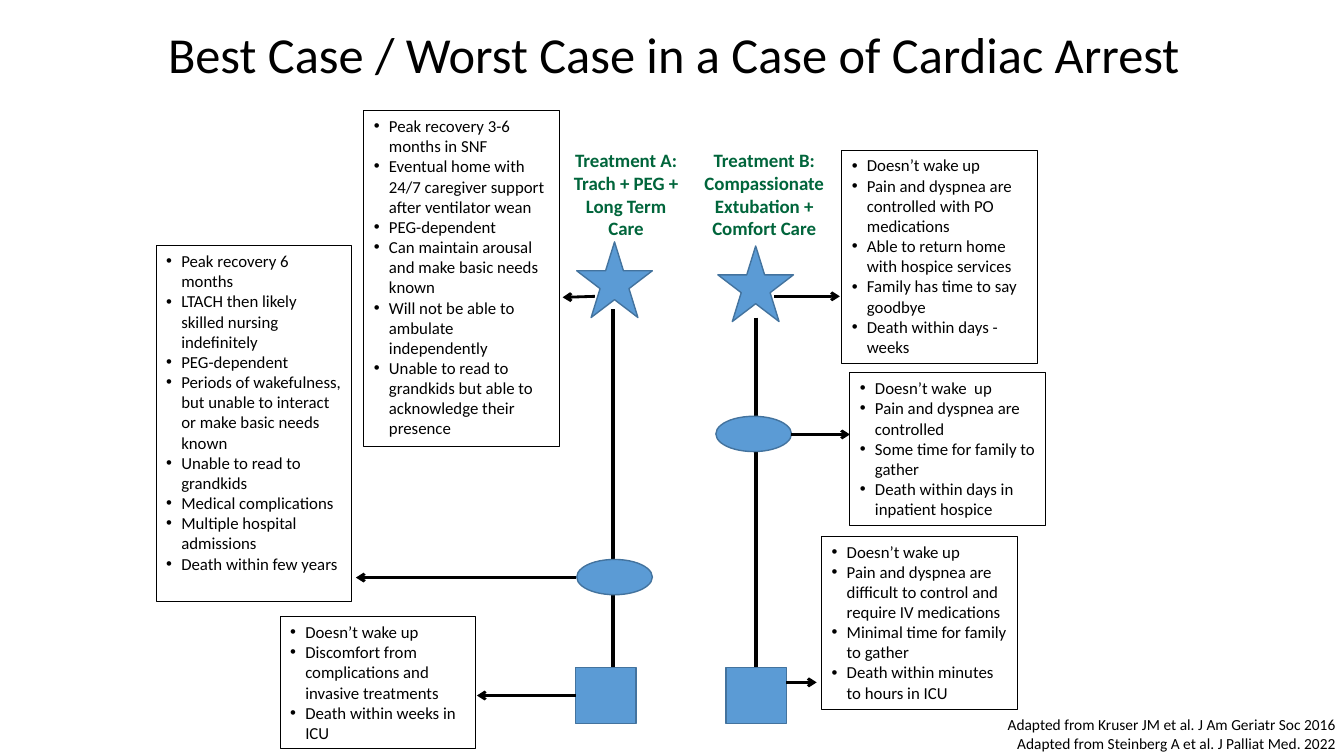
from lxml import etree
from pptx import Presentation
from pptx.dml.color import RGBColor
from pptx.enum import shapes, text
from pptx.oxml import ns
from pptx.util import Inches, Pt

TITLE = "Best Case / Worst Case in a Case of Cardiac Arrest"
BLACK, GREEN, BLUE, NAVY = "000000", "00653B", "5B9BD5", "43739E"
FONT = "Calibri"

HEADINGS = [
    ((5.56, 1.43, 1.3, 1.01), ["Treatment A: Trach + PEG +", "Long Term Care"]),
    ((6.83, 1.43, 1.5, 1.01), ["Treatment B: Compassionate Extubation + Comfort Care"]),
]
SOURCES = ((8.22, 7.05, 5.13, 0.47), [
    "Adapted from Kruser JM et al.\u00a0J Am Geriatr Soc 2016",
    "Adapted from Steinberg A et al. J Palliat Med. 2022",
])

OUTCOME_WIDTH = 1.94
OUTCOMES = [
    (3.61, 1.1, 3.33, [
        "Peak recovery 3-6 months in SNF",
        "Eventual home with 24/7 caregiver support after ventilator wean",
        "PEG-dependent",
        "Can maintain arousal and make basic needs known",
        "Will not be able to ambulate independently",
        "Unable to read to grandkids but able to acknowledge their presence",
    ]),
    (1.55, 2.44, 3.53, [
        "Peak recovery 6 months",
        "LTACH then likely skilled nursing indefinitely",
        "PEG-dependent",
        "Periods of wakefulness, but unable to interact or make basic needs known",
        "Unable to read to grandkids",
        "Medical complications",
        "Multiple hospital admissions",
        "Death within few years",
    ]),
    (2.78, 6.12, 1.31, [
        "Doesn’t wake up",
        "Discomfort from complications and invasive treatments",
        "Death within weeks in ICU",
    ]),
    (8.35, 1.49, 2.12, [
        "Doesn’t wake up",
        "Pain and dyspnea are controlled with PO medications",
        "Able to return home with hospice services",
        "Family has time to say goodbye",
        "Death within days - weeks",
    ]),
    (8.43, 3.7, 1.51, [
        "Doesn’t wake  up",
        "Pain and dyspnea are  controlled",
        "Some time for family to gather",
        "Death within days in inpatient hospice",
    ]),
    (8.15, 5.32, 1.72, [
        "Doesn’t wake up",
        "Pain and dyspnea are difficult to control and require IV medications",
        "Minimal time for family to gather",
        "Death within minutes to hours in ICU",
    ]),
]

STAR, OVAL, SQUARE = (shapes.MSO_SHAPE.STAR_5_POINT, shapes.MSO_SHAPE.OVAL,
                      shapes.MSO_SHAPE.RECTANGLE)
MARKER_SIZES = {STAR: (0.75, 0.75), OVAL: (0.75, 0.35), SQUARE: (0.6, 0.56)}
MARKERS = {
    "best A": (STAR, 5.72, 2.4), "best B": (STAR, 7.12, 2.44),
    "likely A": (OVAL, 5.72, 5.55), "likely B": (OVAL, 7.1, 4.13),
    "worst A": (SQUARE, 5.71, 6.62), "worst B": (SQUARE, 7.2, 6.62),
}
STEMS = [(6.08, 3.07, 6.08, 6.62), (7.5, 3.15, 7.5, 6.66)]
ARROWS = {
    "best A": (5.9, 2.94, 5.58, 2.95), "likely A": (5.71, 5.73, 3.53, 5.73),
    "worst A": (5.71, 6.9, 4.73, 6.9), "best B": (7.68, 2.94, 8.33, 2.94),
    "likely B": (7.85, 4.31, 8.43, 4.31), "worst B": (7.8, 6.77, 8.1, 6.77),
}


def color(code):
    return RGBColor.from_string(code)


def apply(target, values):
    for name, value in values.items():
        setattr(target, name, value)


def add_child(parent, tag, **attributes):
    return etree.SubElement(parent, ns.qn(tag), attributes)


def write(box, lines, size, code=BLACK, bold=False, align=text.PP_ALIGN.LEFT,
          anchor=text.MSO_ANCHOR.TOP, spacing=1.0, bullet=False):
    frame = box.text_frame
    apply(frame, {"word_wrap": True, "auto_size": text.MSO_AUTO_SIZE.NONE,
                  "vertical_anchor": anchor})
    for index, line in enumerate(lines):
        para = frame.paragraphs[0] if index == 0 else frame.add_paragraph()
        apply(para, {"alignment": align, "line_spacing": spacing})
        span = para.add_run()
        span.text = line
        apply(span.font, {"name": FONT, "size": Pt(size), "bold": bold})
        span.font.color.rgb = color(code)
        if bullet:
            props = para._p.get_or_add_pPr()
            props.set("marL", str(Inches(0.15)))
            props.set("indent", str(Inches(-0.15)))
            add_child(props, "a:buFont", typeface="Arial")
            add_child(props, "a:buChar", char="•")


def add_box(page, kind, place, line_code, line_width, fill_code=None):
    box = page.shapes.add_shape(kind, *map(Inches, place))
    box.shadow.inherit = False
    if fill_code:
        box.fill.solid()
        box.fill.fore_color.rgb = color(fill_code)
    else:
        box.fill.background()
    box.line.color.rgb = color(line_code)
    box.line.width = Pt(line_width)
    return box


def add_line(page, ends, width, arrow=False):
    line = page.shapes.add_connector(shapes.MSO_CONNECTOR.STRAIGHT, *map(Inches, ends))
    line.line.color.rgb = color(BLACK)
    line.line.width = Pt(width)
    if arrow:
        add_child(line.line._get_or_add_ln(), "a:tailEnd", type="arrow")
    add_child(line._element.spPr, "a:effectLst")
    return line


def main():
    deck = Presentation()
    apply(deck, {"slide_width": Inches(13.33), "slide_height": Inches(7.5)})
    page = deck.slides.add_slide(deck.slide_layouts[5])

    title = page.shapes.title
    apply(title, {"left": Inches(0.34), "top": Inches(0.24),
                  "width": Inches(12.69), "height": Inches(0.65)})
    write(title, [TITLE], 36, align=text.PP_ALIGN.CENTER,
          anchor=text.MSO_ANCHOR.MIDDLE, spacing=0.9)

    for ends in STEMS:
        add_line(page, ends, 2.5)

    markers = {}
    for name, (kind, left, top) in MARKERS.items():
        place = (left, top, *MARKER_SIZES[kind])
        markers[name] = add_box(page, kind, place, NAVY, 1, BLUE)

    for place, lines in HEADINGS:
        box = page.shapes.add_textbox(*map(Inches, place))
        write(box, lines, 13.5, GREEN, bold=True, align=text.PP_ALIGN.CENTER)

    for left, top, height, lines in OUTCOMES:
        box = add_box(page, SQUARE, (left, top, OUTCOME_WIDTH, height), BLACK, 0.75)
        write(box, lines, 12, bullet=True)

    arrows = {name: add_line(page, ends, 2, arrow=True) for name, ends in ARROWS.items()}
    arrows["worst A"].begin_connect(markers["worst A"], 1)

    place, lines = SOURCES
    box = page.shapes.add_textbox(*map(Inches, place))
    write(box, lines, 11, align=text.PP_ALIGN.RIGHT)

    deck.save("out.pptx")


if __name__ == "__main__":
    main()
